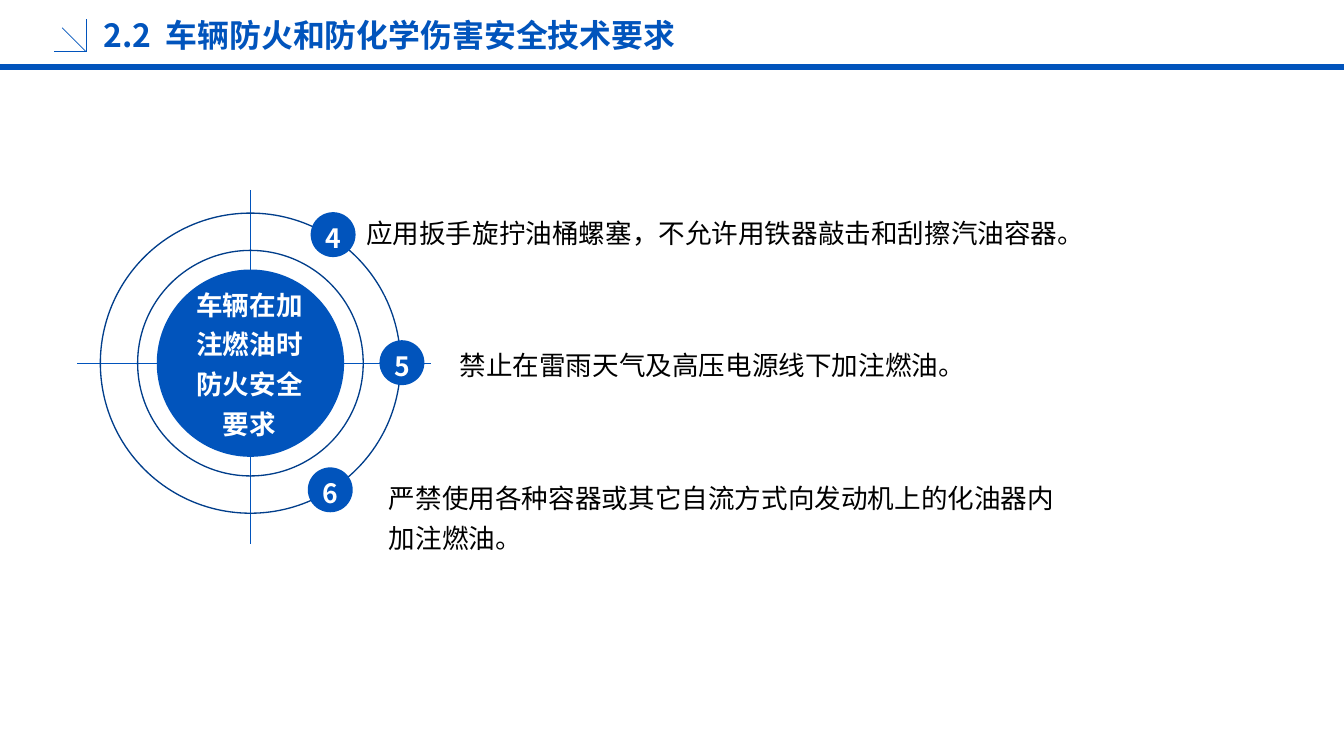
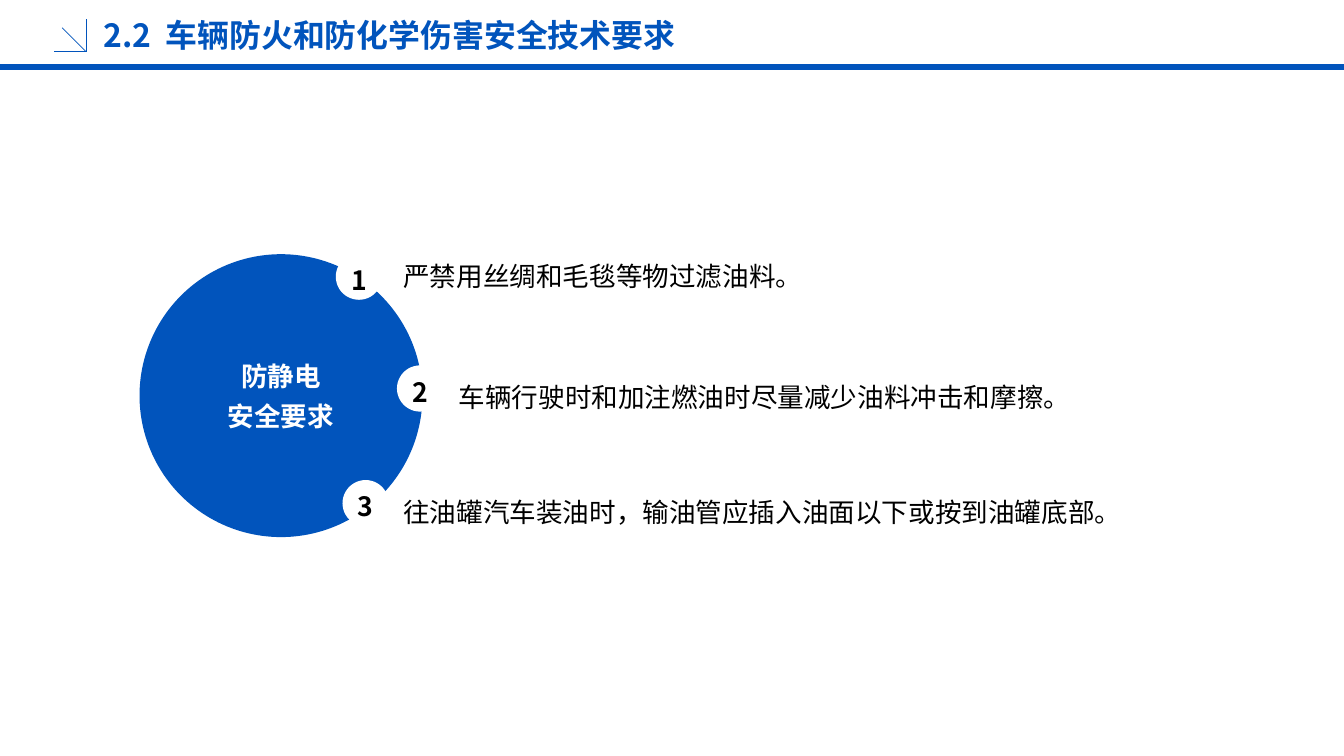
from lxml import etree
from pptx import Presentation
from pptx.dml.color import RGBColor
from pptx.enum.shapes import MSO_CONNECTOR, MSO_SHAPE
from pptx.enum.text import MSO_ANCHOR, MSO_AUTO_SIZE, PP_ALIGN
from pptx.oxml.ns import qn
from pptx.util import Inches, Pt

STRAIGHT = MSO_CONNECTOR.STRAIGHT
ELLIPSE = MSO_SHAPE.OVAL
MIDDLE, TOP = MSO_ANCHOR.MIDDLE, MSO_ANCHOR.TOP
LEFT, CENTER, JUSTIFY = PP_ALIGN.LEFT, PP_ALIGN.CENTER, PP_ALIGN.JUSTIFY
GROW = MSO_AUTO_SIZE.SHAPE_TO_FIT_TEXT

WIDTH, HEIGHT = 14.06, 7.91
FONT = "Noto Sans CJK SC"
COLORS = {"blue": "0154BC", "navy": "013E8B", "white": "FFFFFF", "black": "000000"}
BADGE_SIZE = 0.47
SECTION = ("2.2", " ", "车辆防火和防化学伤害安全技术要求")

FUEL_LABEL = ["车辆在加注燃油时防火安全要求"]
FUEL_ITEMS = [
    ("4", (3.25, 2.22), (3.72, 2.15, 8.66, 0.49), False,
     "应用扳手旋拧油桶螺塞，不允许用铁器敲击和刮擦汽油容器。"),
    ("5", (3.97, 3.56), (4.71, 3.52, 7.21, 0.48), True,
     "禁止在雷雨天气及高压电源线下加注燃油。"),
    ("6", (3.22, 4.89), (3.97, 4.91, 7.16, 0.94), True,
     "严禁使用各种容器或其它自流方式向发动机上的化油器内加注燃油。"),
]
STATIC_LABEL = ["防静电", "安全要求"]
STATIC_ITEMS = [
    ("1", (3.52, 2.66), (4.11, 2.6, 4.59, 0.49), False,
     "严禁用丝绸和毛毯等物过滤油料。"),
    ("2", (4.16, 3.83), (4.7, 3.85, 7.36, 0.48), True,
     "车辆行驶时和加注燃油时尽量减少油料冲击和摩擦。"),
    ("3", (3.59, 5.03), (4.12, 5.06, 7.79, 0.49), True,
     "往油罐汽车装油时，输油管应插入油面以下或按到油罐底部。"),
]


def color(name):
    """Return the named palette colour."""
    return RGBColor.from_string(COLORS[name])


def style_paragraph(para, shade, size=20, bold=False, align=CENTER, spacing=1.2):
    """Set the font, alignment and line spacing of a paragraph."""
    para.alignment = align
    para.line_spacing = spacing
    font = para.font
    font.name, font.size, font.bold = FONT, Pt(size), bold
    font.color.rgb = color(shade)
    properties = para._p.pPr.find(qn("a:defRPr"))
    etree.SubElement(properties, qn("a:ea")).set("typeface", FONT)


def add_line(shapes, start, end, weight=0.5):
    """Draw a straight blue line without a shadow."""
    line = shapes.add_connector(STRAIGHT, *map(Inches, (*start, *end)))
    line.line.color.rgb = color("blue")
    line.line.width = Pt(weight)
    etree.SubElement(line._element.spPr, qn("a:effectLst"))


def add_circle(page, left, top, size, fill=None, outline=None):
    """Draw a circle from its box corner and diameter."""
    circle = page.shapes.add_shape(ELLIPSE, *map(Inches, (left, top, size, size)))
    circle.shadow.inherit = False
    if fill:
        circle.fill.solid()
        circle.fill.fore_color.rgb = color(fill)
    else:
        circle.fill.background()
    if outline:
        circle.line.color.rgb = color(outline)
        circle.line.width = Pt(1)
    else:
        circle.line.fill.background()
    return circle


def add_centered_circle(page, center, radius, fill=None, outline=None):
    """Draw a circle around a centre point."""
    x, y = center
    return add_circle(page, x - radius, y - radius, 2 * radius, fill, outline)


def add_text(page, box, texts, growing=False, **style):
    """Place wrapped paragraphs in a box, fixed and centred or growing down."""
    area = page.shapes.add_textbox(*map(Inches, box))
    frame = area.text_frame
    frame.word_wrap = True
    frame.vertical_anchor = TOP if growing else MIDDLE
    if growing:
        frame.auto_size = GROW
    else:
        frame.margin_left = frame.margin_right = Inches(0.11)
    for index, text in enumerate(texts):
        para = frame.add_paragraph() if index else frame.paragraphs[0]
        style_paragraph(para, **style)
        for part in ([text] if isinstance(text, str) else text):
            span = para.add_run()
            span.text = part
            if part == " ":
                span._r.get_or_add_rPr().set("spc", "540")


def add_header(page):
    """Add the rule, the corner arrow and the section title."""
    add_line(page.shapes, (0, 0.7), (WIDTH, 0.7), 4.5)
    arrow = page.shapes.add_group_shape()
    for tail in ((0.57, 0.54), (0.9, 0.2), (0.65, 0.29)):
        add_line(arrow.shapes, (0.9, 0.54), tail)
    add_text(page, (0.97, 0.15, 6.38, 0.34), [SECTION],
             shade="blue", size=24, bold=True, align=LEFT)


def add_label(page, center, texts):
    """Write the white topic in the middle of a disc."""
    x, y = center
    add_text(page, (x - 0.8, y - 0.8, 1.6, 1.6), texts,
             shade="white", bold=True, spacing=1.25)


def add_items(page, items, fill, shade, outline=None):
    """Add numbered badges with their requirement texts."""
    for number, corner, box, growing, text in items:
        badge = add_circle(page, *corner, BADGE_SIZE, fill, outline)
        frame = badge.text_frame
        frame.word_wrap = False
        frame.vertical_anchor = MIDDLE
        frame.margin_left = frame.margin_right = 0
        frame.margin_top = frame.margin_bottom = 0
        frame.text = number
        style_paragraph(frame.paragraphs[0], shade, bold=True)
        add_text(page, box, [text], growing,
                 shade="black", align=JUSTIFY, spacing=1.25)


def build_fuel_page(page):
    """Build the refuelling page with its target rings."""
    add_header(page)
    center = (2.62, 3.8)
    add_line(page.shapes, (2.62, 1.99), (2.62, 5.69))
    add_line(page.shapes, (0.81, 3.8), (4.51, 3.8))
    add_centered_circle(page, center, 0.98, fill="blue")
    for radius in (1.18, 1.57):
        add_centered_circle(page, center, radius, outline="navy")
    add_items(page, FUEL_ITEMS, "blue", "white")
    add_label(page, (2.61, 3.77), FUEL_LABEL)


def build_static_page(page):
    """Build the anti-static page with its notched disc."""
    add_header(page)
    add_centered_circle(page, (2.94, 4.14), 1.48, fill="blue")
    add_items(page, STATIC_ITEMS, "white", "black", "white")
    add_label(page, (2.94, 4.1), STATIC_LABEL)


def main():
    """Create and save the deck."""
    deck = Presentation()
    deck.slide_width, deck.slide_height = Inches(WIDTH), Inches(HEIGHT)
    for build in (build_fuel_page, build_static_page):
        build(deck.slides.add_slide(deck.slide_layouts[6]))
    deck.save("out.pptx")


if __name__ == "__main__":
    main()
